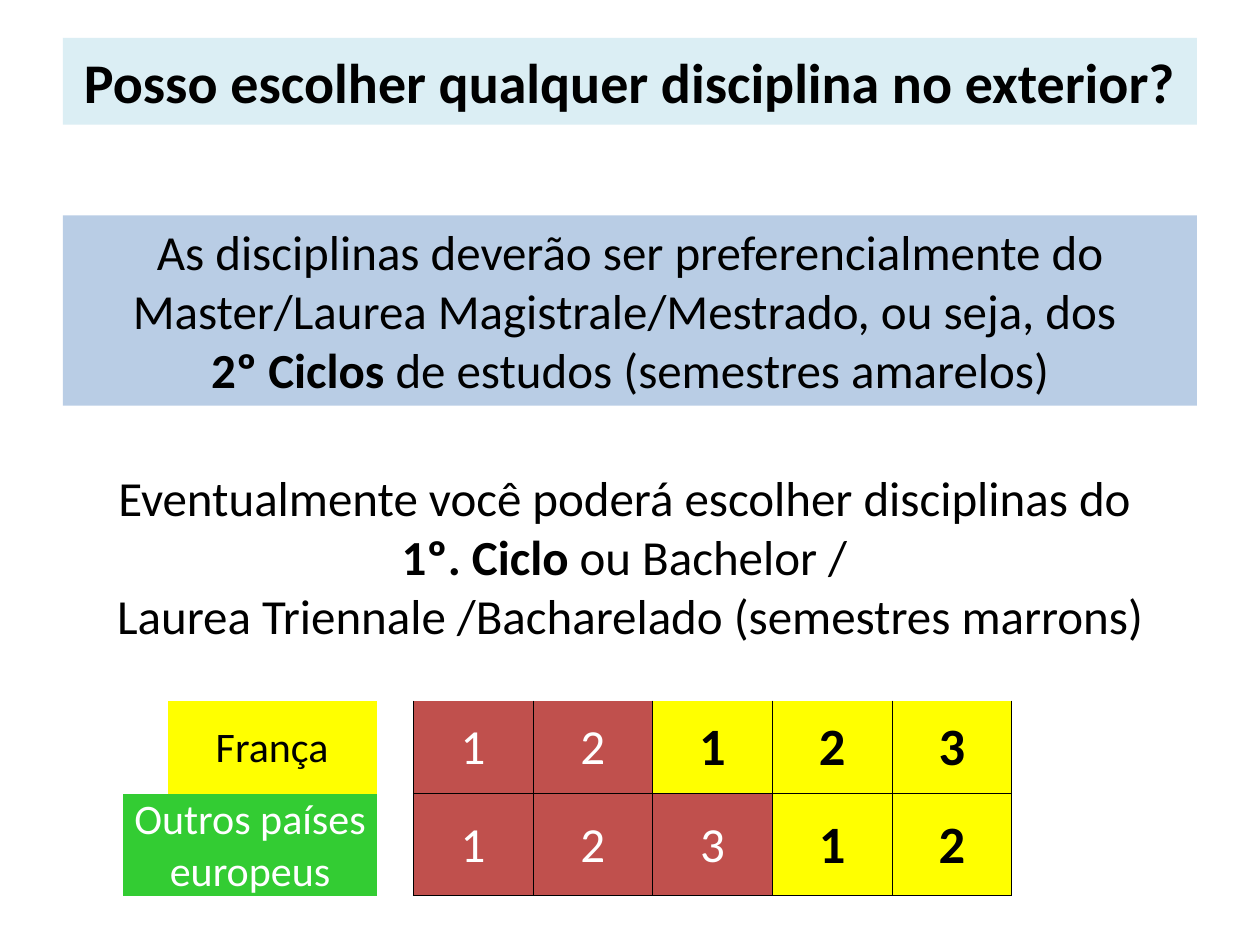
from lxml.etree import SubElement
from pptx import Presentation
from pptx.dml.color import RGBColor
from pptx.enum.text import MSO_ANCHOR, PP_ALIGN
from pptx.oxml.ns import qn
from pptx.util import Inches, Pt

BLACK = RGBColor(0x00, 0x00, 0x00)
WHITE = RGBColor(0xFF, 0xFF, 0xFF)
PALE_BLUE = RGBColor(0xDB, 0xEE, 0xF4)
BLUE = RGBColor(0xB9, 0xCD, 0xE5)
YELLOW = RGBColor(0xFF, 0xFF, 0x00)
BROWN = RGBColor(0xC0, 0x50, 0x4D)
GREEN = RGBColor(0x33, 0xCC, 0x33)

COL_WIDTHS = [0.35, 1.66, 0.29] + [0.95] * 5
ROW_HEIGHTS = [0.74, 0.81]
FIRST_SEMESTER_COL = 3
SEMESTERS = 5


def write(p, text, size=28, bold=False, color=BLACK):
    """Add text to a paragraph, with a line break at each newline."""
    for i, line in enumerate(text.split("\n")):
        if i:
            p.add_line_break()
        if line:
            r = p.add_run()
            r.text = line
            r.font.name = "Calibri"
            r.font.size = Pt(size)
            r.font.bold = bold
            r.font.color.rgb = color
    p.alignment = PP_ALIGN.CENTER


def add_text_box(s, box, parts, fill=None, size=28, anchor=MSO_ANCHOR.TOP):
    """Place a centred text box; parts are (text, bold) pairs."""
    sp = s.shapes.add_textbox(*map(Inches, box))
    if fill is not None:
        sp.fill.solid()
        sp.fill.fore_color.rgb = fill
    tf = sp.text_frame
    tf.word_wrap = True
    tf.vertical_anchor = anchor
    for text, bold in parts:
        write(tf.paragraphs[0], text, size=size, bold=bold)


def set_borders(cell, sides):
    """Draw thin black lines on the given sides (of LRTB) and none elsewhere."""
    tc_pr = cell._tc.get_or_add_tcPr()
    for side in "LRTB":
        ln = SubElement(tc_pr, qn(f"a:ln{side}"), w=str(Pt(0.5)))
        if side in sides:
            fill = SubElement(ln, qn("a:solidFill"))
            SubElement(fill, qn("a:srgbClr"), val=str(BLACK))
        else:
            SubElement(ln, qn("a:noFill"))


def fill_cell(cell, text, fill, **fmt):
    cell.fill.solid()
    cell.fill.fore_color.rgb = fill
    cell.vertical_anchor = MSO_ANCHOR.MIDDLE
    cell.margin_left = cell.margin_right = cell.margin_top = Inches(0.01)
    cell.margin_bottom = 0
    write(cell.text_frame.paragraphs[0], text, **fmt)


def add_semesters(table, row, first_cycle):
    """Number the first-cycle semesters in brown, then the rest in yellow."""
    for i in range(SEMESTERS):
        cell = table.cell(row, FIRST_SEMESTER_COL + i)
        if i < first_cycle:
            fill_cell(cell, str(i + 1), BROWN, color=WHITE)
        else:
            fill_cell(cell, str(i - first_cycle + 1), YELLOW, size=30, bold=True)


def add_cycle_table(s, left, top):
    frame = s.shapes.add_table(
        len(ROW_HEIGHTS), len(COL_WIDTHS), Inches(left), Inches(top),
        Inches(sum(COL_WIDTHS)), Inches(sum(ROW_HEIGHTS)))
    table = frame.table
    table.first_row = table.horz_banding = False
    for col, width in zip(table.columns, COL_WIDTHS):
        col.width = Inches(width)
    for row, height in zip(table.rows, ROW_HEIGHTS):
        row.height = Inches(height)

    for y in range(len(ROW_HEIGHTS)):
        for x in range(len(COL_WIDTHS)):
            cell = table.cell(y, x)
            if x >= FIRST_SEMESTER_COL:
                set_borders(cell, "LRTB" if y else "LRB")
            else:
                set_borders(cell, "R" if x == FIRST_SEMESTER_COL - 1 else "")
                cell.fill.background()

    table.cell(1, 0).merge(table.cell(1, 1))
    fill_cell(table.cell(0, 1), "França", YELLOW, size=24)
    fill_cell(table.cell(1, 0), "Outros países europeus", GREEN, size=24, color=WHITE)
    add_semesters(table, 0, first_cycle=2)
    add_semesters(table, 1, first_cycle=3)


def main():
    prs = Presentation()
    prs.slide_width, prs.slide_height = Inches(10), Inches(7.5)
    s = prs.slides.add_slide(prs.slide_layouts[6])
    add_text_box(s, (0.5, 0.3, 9, 0.69),
                 [("Posso escolher qualquer disciplina no exterior?", True)],
                 fill=PALE_BLUE, size=32, anchor=MSO_ANCHOR.MIDDLE)
    add_text_box(s, (0.5, 1.71, 9, 1.51), [
        ("As disciplinas deverão ser preferencialmente do "
         "Master/Laurea Magistrale/Mestrado, ou seja, dos \n", False),
        ("2º Ciclos ", True),
        ("de estudos (semestres amarelos)", False)], fill=BLUE)
    add_text_box(s, (0.5, 3.66, 9, 1.51), [
        ("Eventualmente você poderá escolher disciplinas do \n", False),
        ("1º. Ciclo ", True),
        ("ou Bachelor / \nLaurea Triennale /Bacharelado (semestres marrons)", False)])
    add_cycle_table(s, 0.98, 5.56)
    prs.save("out.pptx")


if __name__ == "__main__":
    main()
